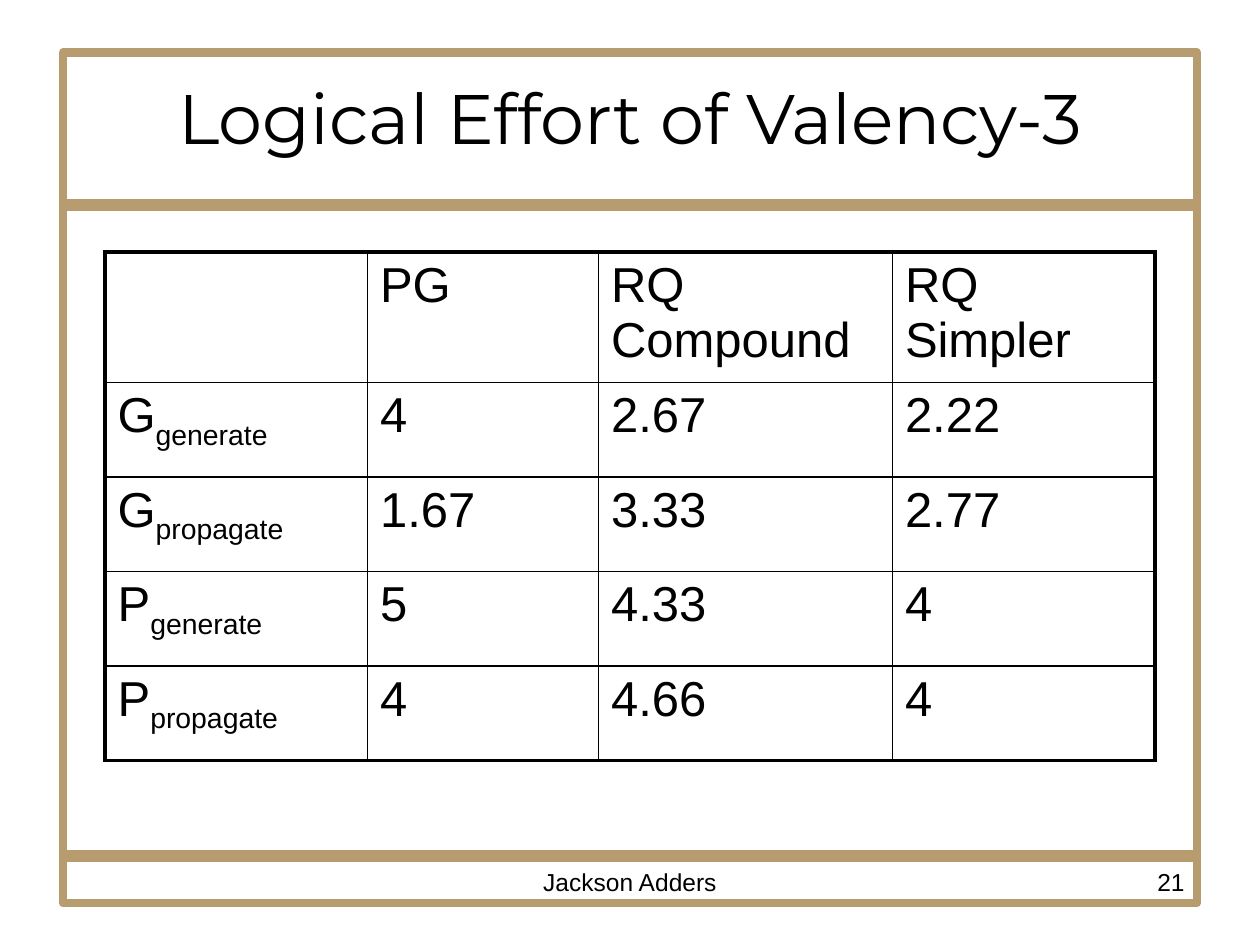
from dataclasses import dataclass

import pptx
import pptx.dml.color
import pptx.enum.shapes
import pptx.enum.text
import pptx.oxml
import pptx.oxml.ns
import pptx.util
from lxml import etree

COLORS = {"gold": "B69C6E", "black": "000000"}
ALIGN = pptx.enum.text.PP_ALIGN
WIDTH, HEIGHT = pptx.util.Inches(10), pptx.util.Inches(7.5)
COLUMN, ROW = WIDTH / 120, HEIGHT / 90  # grid of 1/12 inch squares

TITLE_FORMAT = {"name": "Montserrat", "size": pptx.util.Pt(40)}
FOOTER_FORMAT = {"name": "Arial", "size": pptx.util.Pt(14)}
CELL_FORMAT = {"name": "Arial", "size": pptx.util.Pt(28)}
THICK, THIN = 2.25, 1


@dataclass
class Area:
    """A rectangle in grid columns and rows."""
    left: float
    top: float
    width: float
    height: float

    def lengths(self) -> dict:
        return {"left": round(self.left * COLUMN), "top": round(self.top * ROW),
                "width": round(self.width * COLUMN), "height": round(self.height * ROW)}


@dataclass
class Bar:
    area: Area
    line_width: float
    filled: bool


@dataclass
class Footer:
    text: str
    area: Area
    alignment: ALIGN


FRAME = [
    Bar(Area(6, 19, 108, 1), 0.75, True),
    Bar(Area(6, 5, 108, 81), 5, False),
    Bar(Area(6, 81, 108, 1), 0.75, True),
]
FOOTERS = [
    Footer("Jackson Adders", Area(41, 82, 38, 6.25), ALIGN.CENTER),
    Footer("21", Area(86, 82, 28, 6.25), ALIGN.RIGHT),
]
TITLE_AREA = Area(6, 3.6, 108, 15)
TABLE_AREA = Area(10, 24, 100, 46.8)
TABLE_COLUMNS = [25, 22, 28, 25]
TABLE_ROWS = [10.8, 9, 9, 9, 9]
# Each cell is a (text, subscript) pair or plain text
TABLE = [
    ["", "PG", "RQ Compound", "RQ Simpler"],
    [("G", "generate"), "4", "2.67", "2.22"],
    [("G", "propagate"), "1.67", "3.33", "2.77"],
    [("P", "generate"), "5", "4.33", "4"],
    [("P", "propagate"), "4", "4.66", "4"],
]


def rgb(name: str) -> pptx.dml.color.RGBColor:
    return pptx.dml.color.RGBColor.from_string(COLORS[name])


def set_attributes(target, values: dict) -> None:
    for name, value in values.items():
        setattr(target, name, value)


def add_run(paragraph, text: str, font_format: dict):
    run = paragraph.add_run()
    run.text = text
    set_attributes(run.font, font_format)
    run.font.color.rgb = rgb("black")
    return run


def add_bar(slide, bar: Bar) -> None:
    shape = slide.shapes.add_shape(
        pptx.enum.shapes.MSO_SHAPE.RECTANGLE, **bar.area.lengths())
    shape.shadow.inherit = False
    if bar.filled:
        shape.fill.solid()
        shape.fill.fore_color.rgb = rgb("gold")
    else:
        shape.fill.background()
    shape.line.color.rgb = rgb("gold")
    shape.line.width = pptx.util.Pt(bar.line_width)


def add_footer(slide, footer: Footer) -> None:
    shape = slide.shapes.add_textbox(**footer.area.lengths())
    shape.text_frame.word_wrap = True
    paragraph = shape.text_frame.paragraphs[0]
    paragraph.alignment = footer.alignment
    add_run(paragraph, footer.text, FOOTER_FORMAT)


def set_title(slide, text: str) -> None:
    title = slide.shapes.title
    set_attributes(title, TITLE_AREA.lengths())
    title.text_frame.vertical_anchor = pptx.enum.text.MSO_ANCHOR.MIDDLE
    paragraph = title.text_frame.paragraphs[0]
    paragraph.alignment = ALIGN.CENTER
    add_run(paragraph, text, TITLE_FORMAT)


def add_border(cell, side: str, points: float) -> None:
    properties = cell._tc.get_or_add_tcPr()
    properties.append(pptx.oxml.parse_xml(
        f'<a:ln{side} {pptx.oxml.ns.nsdecls("a")} w="{pptx.util.Pt(points)}">'
        f'<a:solidFill><a:srgbClr val="{COLORS["black"]}"/></a:solidFill></a:ln{side}>'))


def fill_cell(cell, content) -> None:
    text, subscript = content if isinstance(content, tuple) else (content, "")
    paragraph = cell.text_frame.paragraphs[0]
    spacing = etree.SubElement(
        paragraph._p.get_or_add_pPr(), pptx.oxml.ns.qn("a:spcBef"))
    etree.SubElement(spacing, pptx.oxml.ns.qn("a:spcPct"), val="20000")
    if text:
        add_run(paragraph, text, CELL_FORMAT)
    if subscript:
        run = add_run(paragraph, subscript, CELL_FORMAT)
        run.font._element.set("baseline", "-25000")


def add_effort_table(slide) -> None:
    last_row, last_column = len(TABLE_ROWS) - 1, len(TABLE_COLUMNS) - 1
    table = slide.shapes.add_table(
        len(TABLE_ROWS), len(TABLE_COLUMNS), **TABLE_AREA.lengths()).table
    set_attributes(table, {"first_row": False, "horz_banding": False})
    for column, width in zip(table.columns, TABLE_COLUMNS):
        column.width = round(width * COLUMN)
    for row, height in zip(table.rows, TABLE_ROWS):
        row.height = round(height * ROW)
    for i, contents in enumerate(TABLE):
        for j, content in enumerate(contents):
            cell = table.cell(i, j)
            fill_cell(cell, content)
            # Thick outer edges, thin inner lines
            outer = {"L": j == 0, "R": j == last_column, "T": i == 0, "B": i == last_row}
            for side, is_outer in outer.items():
                add_border(cell, side, THICK if is_outer else THIN)
            cell.fill.background()


def main() -> None:
    presentation = pptx.Presentation()
    set_attributes(presentation, {"slide_width": WIDTH, "slide_height": HEIGHT})
    slide = presentation.slides.add_slide(presentation.slide_layouts[5])

    # Frame and footer
    for bar in FRAME:
        add_bar(slide, bar)
    for footer in FOOTERS:
        add_footer(slide, footer)

    # Title and table
    set_title(slide, "Logical Effort of Valency-3")
    add_effort_table(slide)
    presentation.save("out.pptx")


if __name__ == "__main__":
    main()
